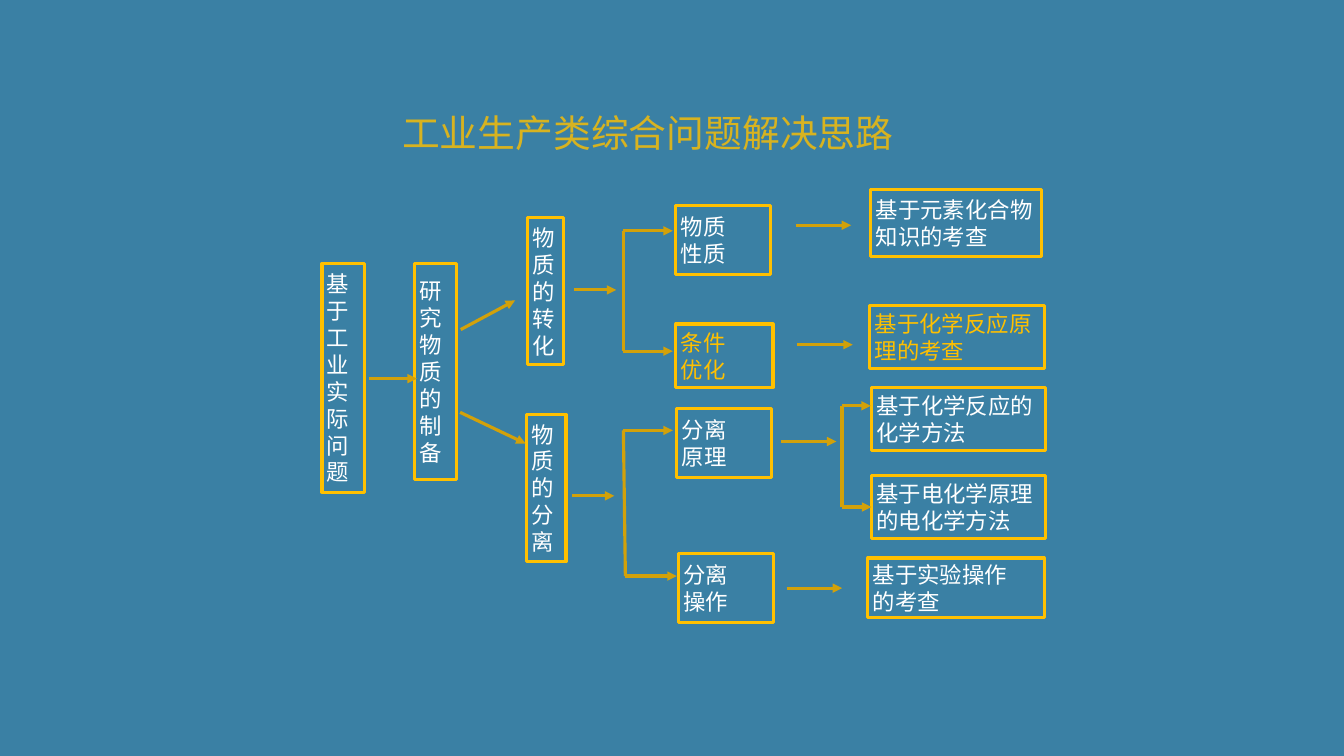
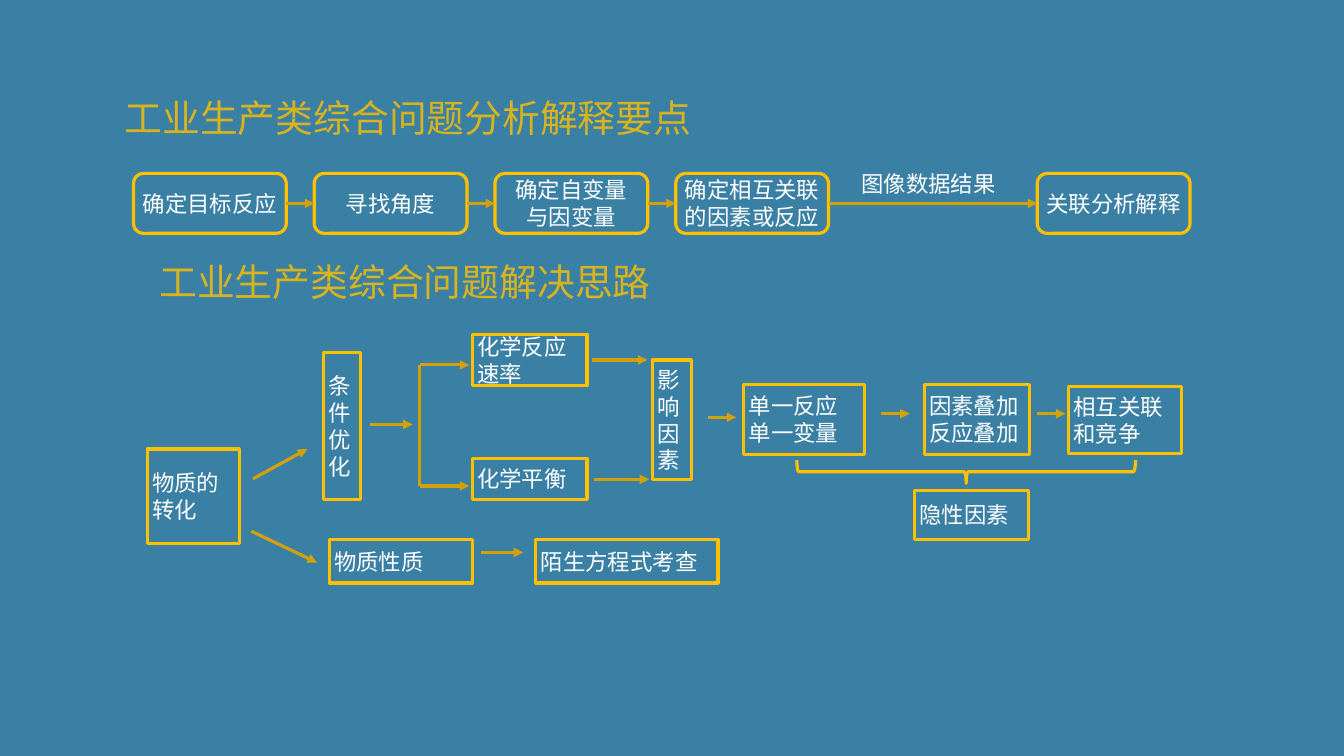
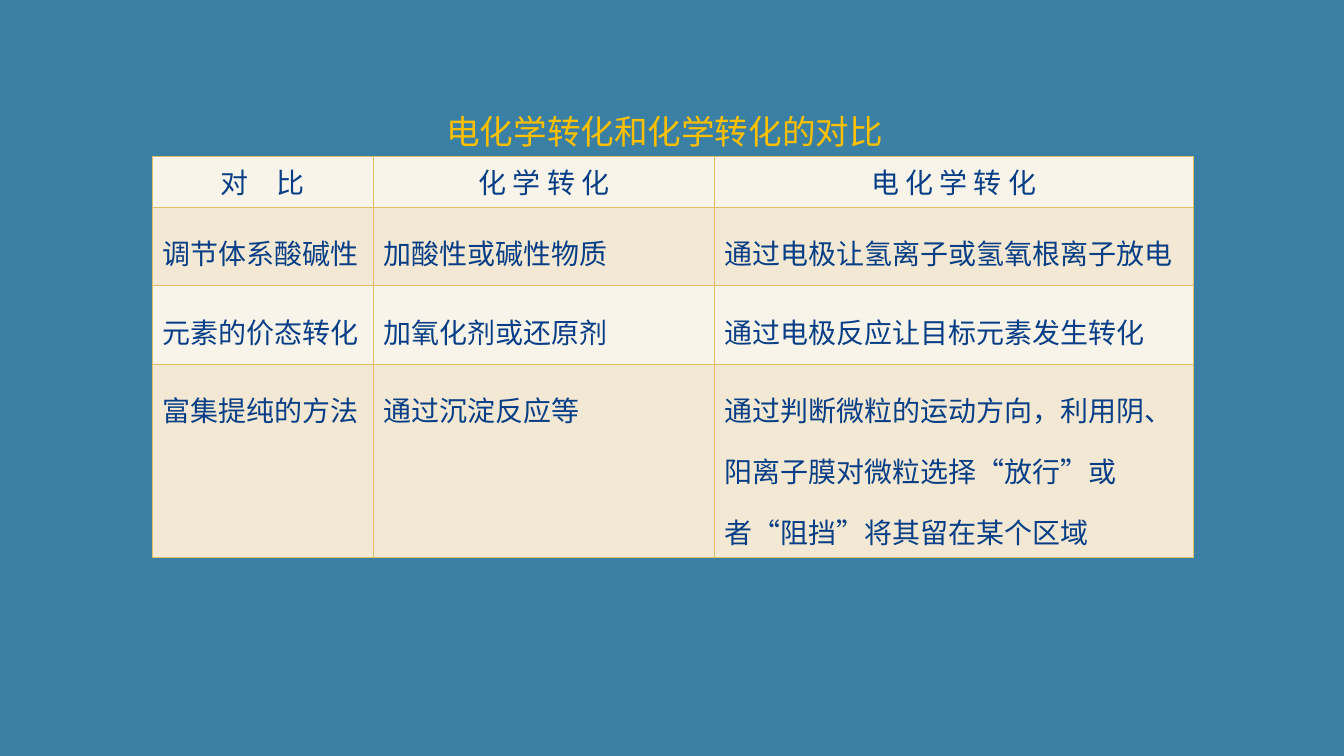
"""Build three slides on solving industrial chemistry production problems."""
from lxml import etree
from pptx import Presentation
from pptx.dml.color import RGBColor
from pptx.enum.lang import MSO_LANGUAGE_ID
from pptx.enum.shapes import MSO_CONNECTOR, MSO_SHAPE
from pptx.enum.text import MSO_ANCHOR, PP_ALIGN
from pptx.oxml.ns import qn
from pptx.util import Cm, Pt

STRAIGHT = MSO_CONNECTOR.STRAIGHT
RECT, ROUND, BRACE = MSO_SHAPE.RECTANGLE, MSO_SHAPE.ROUNDED_RECTANGLE, MSO_SHAPE.RIGHT_BRACE
LEFT, CENTER, MIDDLE = PP_ALIGN.LEFT, PP_ALIGN.CENTER, MSO_ANCHOR.MIDDLE
CHINESE = MSO_LANGUAGE_ID.SIMPLIFIED_CHINESE
LEFT_SIDE, RIGHT_SIDE = 1, 3

BLUE = RGBColor(0x3A, 0x80, 0xA4)
GOLD = RGBColor(0xFF, 0xC0, 0x00)
ARROW_GOLD = RGBColor(0xD2, 0xA1, 0x0A)
WHITE = RGBColor(0xFF, 0xFF, 0xFF)
NAVY = RGBColor(0x07, 0x3E, 0x86)
BORDER = RGBColor(0xE0, 0xBF, 0x64)
ROW_FILLS = (RGBColor(0xF9, 0xF4, 0xEA), RGBColor(0xF3, 0xE8, 0xD3))
FONT = "Noto Sans CJK SC"
STROKE = Pt(4.5)
TITLE_SIZE = (39.04, 2.59)
TITLE_INSET = 0.15

APPROACH_TITLE = "工业生产类综合问题解决思路"
APPROACH_BOXES = [
    ("基于工业实际问题", 16.23, 13.28, 2.13, 11.53),
    ("研究物质的制备", 20.9, 13.26, 2.13, 10.92),
    ("物质的转化", 26.57, 10.97, 1.85, 7.42),
    ("物质的分离", 26.52, 20.88, 2.01, 7.42),
    ("物质\n性质", 34.06, 10.34, 4.78, 3.48),
    ("条件\n优化", 34.06, 16.33, 4.9, 3.2),
    ("分离\n原理", 34.11, 20.57, 4.78, 3.48),
    ("分离\n操作", 34.19, 27.89, 4.78, 3.48),
    ("基于元素化合物知识的考查", 43.89, 9.53, 8.59, 3.38),
    ("基于化学反应原理的考查", 43.84, 15.39, 8.79, 3.2),
    ("基于化学反应的化学方法", 43.92, 19.51, 8.79, 3.2),
    ("基于电化学原理的电化学方法", 43.92, 23.95, 8.79, 3.2),
    ("基于实验操作\n的考查", 43.74, 28.12, 8.89, 3.02),
]
HIGHLIGHTED = ("条件\n优化", "基于化学反应原理的考查")
APPROACH_ARROWS = [
    (18.62, 19.08, 21.01, 19.08),
    (23.22, 16.61, 25.96, 15.14),
    (23.19, 20.78, 26.49, 22.35),
    (28.93, 14.61, 31.06, 14.61),
    (28.83, 24.99, 30.96, 24.99),
    (40.11, 11.35, 42.9, 11.35),
    (40.18, 17.37, 42.98, 17.37),
    (39.37, 22.25, 42.16, 22.25),
    (39.65, 29.64, 42.44, 29.64),
]
APPROACH_FORKS = [
    ((31.42, 11.63, 33.91), (31.42, 17.7, 33.91), None),
    ((31.42, 21.69, 33.91), (31.52, 29.03, 34.11), None),
    ((42.44, 20.45, 43.89), (42.44, 25.55, 43.92), "基于电化学原理的电化学方法"),
]

KEY_TITLE = "工业生产类综合问题分析解释要点"
KEY_STEPS = ["确定目标反应", "寻找角度", "确定自变量\n与因变量", "确定相互关联的因素或反应",
             None, "关联分析解释"]
STEP_LEFT, STEP_TOP, STEP_PITCH, STEP_SIZE = 6.73, 8.74, 9.11, (7.7, 3.02)
STEP_LABEL = ("图像数据结果", 42.95, 7.75, *STEP_SIZE)
FACTOR_BOXES = [
    ("物质的转化", 7.42, 22.63, 4.65, 4.78),
    ("条件优化", 16.31, 17.75, 1.85, 7.42),
    ("物质性质", 16.59, 27.2, 7.21, 2.18),
    ("化学反应速率", 23.8, 16.84, 5.79, 2.59),
    ("化学平衡", 23.8, 23.11, 5.79, 2.06),
    ("陌生方程式考查", 27, 27.2, 9.19, 2.18),
    ("影响因素", 32.89, 18.14, 1.96, 6.02),
    ("单一反应单一变量", 37.49, 19.38, 6.1, 3.51),
    ("因素叠加\n反应叠加", 46.58, 19.38, 5.33, 3.51),
    ("相互关联和竞争", 53.85, 19.46, 5.72, 3.4),
    ("隐性因素", 46.1, 24.71, 5.72, 2.49),
]
FACTOR_ARROWS = [
    (12.75, 24.13, 15.49, 22.63),
    (12.67, 26.77, 15.98, 28.35),
    (18.67, 21.39, 20.8, 21.39),
    (24.23, 27.84, 26.37, 27.84),
    (29.85, 18.14, 32.64, 18.14),
    (29.92, 24.16, 32.72, 24.16),
    (35.69, 21.03, 37.11, 21.03),
    (44.42, 20.85, 45.85, 20.85),
    (52.27, 20.85, 53.7, 20.85),
]
FACTOR_FORKS = [((21.16, 18.39, 23.65), (21.16, 24.49, 23.65), None)]
FACTOR_BRACE = (48.11, 15.24, 1.17, 17.07)

COMPARISON_TITLE = "电化学转化和化学转化的对比"
COMPARISON = [
    ("对　比", "化 学 转 化", "电 化 学 转 化"),
    ("调节体系酸碱性", "加酸性或碱性物质", "通过电极让氢离子或氢氧根离子放电"),
    ("元素的价态转化", "加氧化剂或还原剂", "通过电极反应让目标元素发生转化"),
    ("富集提纯的方法", "通过沉淀反应等",
     "通过判断微粒的运动方向，利用阴、阳离子膜对微粒选择“放行”或者“阻挡”将其留在某个区域"),
]
TABLE_LEFT, TABLE_TOP = 7.67, 7.87
COLUMN_WIDTHS = (11.15, 17.2, 24.1)
ROW_HEIGHTS = (2.57, 3.96, 3.96, 9.73)


def set_all(target, values):
    for name, value in values.items():
        setattr(target, name, value)


def write(frame, text, size, color, align, spacing=None, alpha=None):
    frame.word_wrap = True
    frame.text = text
    for para in frame.paragraphs:
        set_all(para, {"alignment": align, "line_spacing": spacing})
        for span in para.runs:
            set_all(span.font, {"size": Pt(size), "name": FONT, "bold": False,
                                "language_id": CHINESE})
            span.font.color.rgb = color
            properties = span._r.get_or_add_rPr()
            properties.find(qn("a:latin")).addnext(
                etree.Element(qn("a:ea"), typeface=FONT))
            if alpha:
                tint = properties.find(".//" + qn("a:srgbClr"))
                etree.SubElement(tint, qn("a:alpha"), val=str(alpha * 1000))


def add_title(page, text, left, top, size=54, extent=TITLE_SIZE, indent=0, alpha=80):
    box = page.shapes.add_textbox(*map(Cm, (left, top, *extent)))
    frame = box.text_frame
    inset = Cm(TITLE_INSET)
    set_all(frame, {"margin_left": Cm(TITLE_INSET + indent), "margin_right": inset,
                    "margin_top": inset, "margin_bottom": inset,
                    "vertical_anchor": MIDDLE})
    write(frame, text, size, GOLD, CENTER, alpha=alpha)


def add_outline(page, preset, place, outlined=True):
    shape = page.shapes.add_shape(preset, *map(Cm, place))
    shape.shadow.inherit = False
    shape.fill.background()
    if outlined:
        shape.line.color.rgb = GOLD
        shape.line.width = STROKE
    else:
        shape.line.fill.background()
    return shape


def add_box(page, text, *place, preset=RECT, outlined=True):
    box = add_outline(page, preset, place, outlined)
    box.text_frame.vertical_anchor = MIDDLE
    color = GOLD if text in HIGHLIGHTED else WHITE
    write(box.text_frame, text, 32, color, LEFT if preset == RECT else CENTER)
    return box


def add_line(page, *ends, arrow=True):
    line = page.shapes.add_connector(STRAIGHT, *map(Cm, ends))
    line.line.color.rgb = ARROW_GOLD
    line.line.width = STROKE
    if arrow:
        etree.SubElement(line.line._get_or_add_ln(), qn("a:tailEnd"), type="triangle")
    etree.SubElement(line._element.spPr, qn("a:effectLst"))
    return line


def add_flow(page, boxes, arrows, forks):
    placed = {box[0]: add_box(page, *box) for box in boxes}
    for ends in arrows:
        add_line(page, *ends)
    for upper, lower, target in forks:
        add_line(page, *lower[:2], *upper[:2], arrow=False)
        for start, y, tip in (upper, lower):
            branch = add_line(page, start, y, tip, y)
        if target:
            branch.end_connect(placed[target], LEFT_SIDE)


def add_steps(page):
    steps = [add_box(page, text, STEP_LEFT + i * STEP_PITCH, STEP_TOP, *STEP_SIZE, preset=ROUND)
             for i, text in enumerate(KEY_STEPS) if text]
    add_box(page, *STEP_LABEL, preset=ROUND, outlined=False)
    for before, after in zip(steps, steps[1:]):
        arrow = add_line(page, 0, 0, 1, 1)
        arrow.begin_connect(before, RIGHT_SIDE)
        arrow.end_connect(after, LEFT_SIDE)


def add_borders(cell):
    properties = cell._tc.get_or_add_tcPr()
    for i, side in enumerate(("lnL", "lnR", "lnT", "lnB")):
        edge = etree.Element(qn("a:" + side), w=str(Pt(1)))
        fill = etree.SubElement(edge, qn("a:solidFill"))
        etree.SubElement(fill, qn("a:srgbClr"), val=str(BORDER))
        properties.insert(i, edge)


def add_comparison(page):
    table = page.shapes.add_table(
        len(COMPARISON), len(COLUMN_WIDTHS), Cm(TABLE_LEFT), Cm(TABLE_TOP),
        Cm(sum(COLUMN_WIDTHS)), Cm(sum(ROW_HEIGHTS))).table
    set_all(table, {"first_row": False, "horz_banding": False})
    for column, width in zip(table.columns, COLUMN_WIDTHS):
        column.width = Cm(width)
    for r, (height, texts) in enumerate(zip(ROW_HEIGHTS, COMPARISON)):
        table.rows[r].height = Cm(height)
        for c, text in enumerate(texts):
            cell = table.cell(r, c)
            set_all(cell, {"margin_left": Cm(0.51), "margin_right": Cm(0.51),
                           "margin_top": Cm(0.25), "margin_bottom": Cm(0.25)})
            cell.fill.solid()
            cell.fill.fore_color.rgb = ROW_FILLS[r % 2]
            add_borders(cell)
            write(cell.text_frame, text, 40, NAVY, LEFT if r else CENTER, 1.5 if r else None)


def main():
    deck = Presentation()
    set_all(deck, {"slide_width": Cm(67.74), "slide_height": Cm(38.1)})
    backdrop = deck.slide_master.background.fill
    backdrop.solid()
    backdrop.fore_color.rgb = BLUE
    approach, factors, comparison = [
        deck.slides.add_slide(deck.slide_layouts[6]) for _ in range(3)]

    add_title(approach, APPROACH_TITLE, 13.13, 5.38)
    add_flow(approach, APPROACH_BOXES, APPROACH_ARROWS, APPROACH_FORKS)

    add_title(factors, KEY_TITLE, 0, 4.62, indent=2.08)
    add_steps(factors)
    add_title(factors, APPROACH_TITLE, 0.89, 12.88)
    add_flow(factors, FACTOR_BOXES, FACTOR_ARROWS, FACTOR_FORKS)
    add_outline(factors, BRACE, FACTOR_BRACE).rotation = 90

    add_title(comparison, COMPARISON_TITLE, 4.8, 2.92, size=48, extent=(55.98, 7.37),
              indent=1.42, alpha=None)
    add_comparison(comparison)
    deck.save("out.pptx")


if __name__ == "__main__":
    main()
